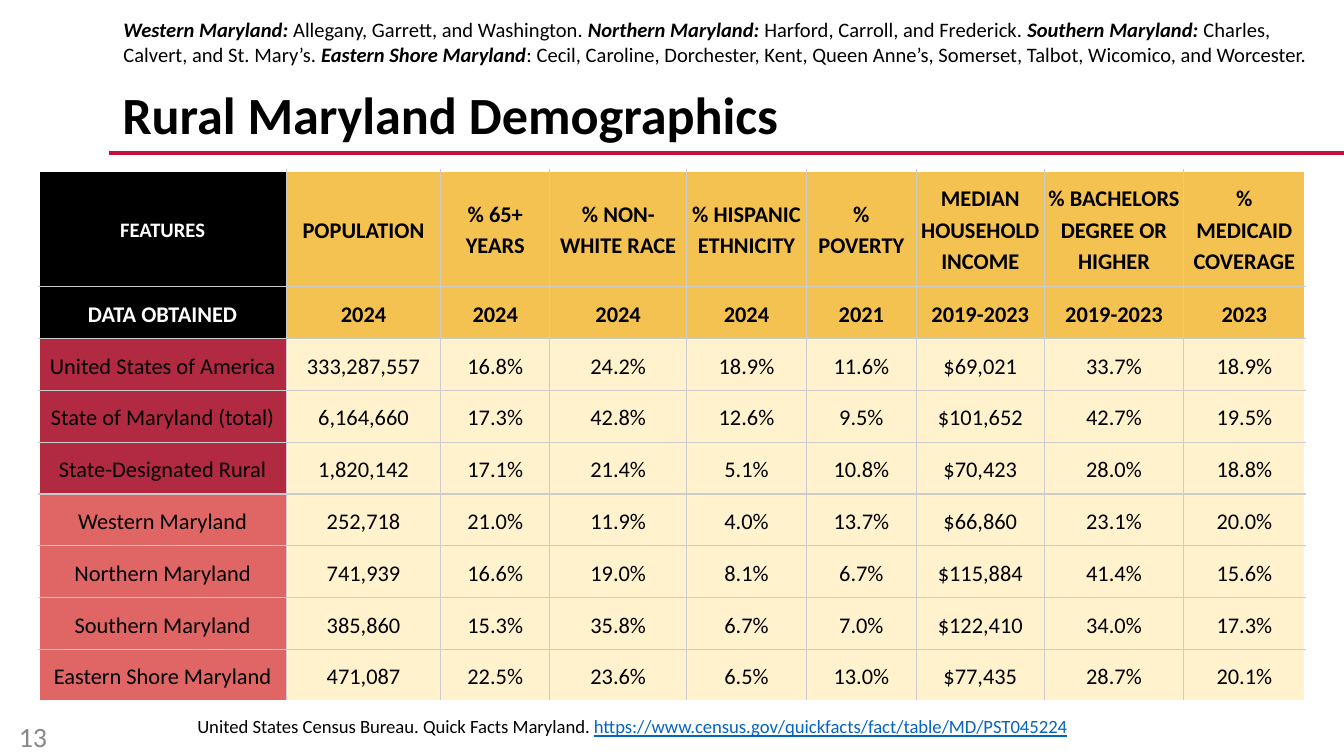
from pptx import Presentation, util as u
from pptx.dml.color import RGBColor
from pptx.enum import shapes, text
from pptx.oxml.ns import qn
from lxml import etree

# Content
TITLE = "Rural Maryland Demographics"
NOTE = [
    ("Western Maryland: ", "Allegany, Garrett, and Washington. "),
    ("Northern Maryland:", " Harford, Carroll, and Frederick. "),
    ("Southern Maryland:", " Charles, Calvert, and St. Mary’s. "),
    ("Eastern Shore Maryland", ": Cecil, Caroline, Dorchester, Kent, Queen Anne’s, "
     "Somerset, Talbot, Wicomico, and Worcester."),
]
SOURCE = "United States Census Bureau. Quick Facts Maryland. "
URL = "https://www.census.gov/quickfacts/fact/table/MD/PST045224"
PAGE = "13"
ROWS = [
    ("FEATURES", "POPULATION", "% 65+ YEARS", "% NON-WHITE RACE", "% HISPANIC ETHNICITY",
     "% POVERTY", "MEDIAN HOUSEHOLD INCOME", "% BACHELORS DEGREE OR HIGHER",
     "% MEDICAID COVERAGE"),
    ("DATA OBTAINED", "2024", "2024", "2024", "2024", "2021", "2019-2023", "2019-2023", "2023"),
    ("United States of America", "333,287,557", "16.8%", "24.2%", "18.9%", "11.6%",
     "$69,021", "33.7%", "18.9%"),
    ("State of Maryland (total)", "6,164,660", "17.3%", "42.8%", "12.6%", "9.5%",
     "$101,652", "42.7%", "19.5%"),
    ("State-Designated Rural", "1,820,142", "17.1%", "21.4%", "5.1%", "10.8%",
     "$70,423", "28.0%", "18.8%"),
    ("Western Maryland", "252,718", "21.0%", "11.9%", "4.0%", "13.7%",
     "$66,860", "23.1%", "20.0%"),
    ("Northern Maryland", "741,939", "16.6%", "19.0%", "8.1%", "6.7%",
     "$115,884", "41.4%", "15.6%"),
    ("Southern Maryland", "385,860", "15.3%", "35.8%", "6.7%", "7.0%",
     "$122,410", "34.0%", "17.3%"),
    ("Eastern Shore Maryland", "471,087", "22.5%", "23.6%", "6.5%", "13.0%",
     "$77,435", "28.7%", "20.1%"),
]
WIDTHS = [1.84, 1.15, 0.81, 1.02, 0.89, 0.82, 0.95, 1.04, 0.9]
HEADS = 2       # heading rows
STATES = 3      # nation and state rows, above the regions
HEIGHTS = [0.86, 0.39] + [2.7 / 7] * 7

# Style
FONT = "Calibri"
BLACK = RGBColor(0x00, 0x00, 0x00)
WHITE = RGBColor(0xFF, 0xFF, 0xFF)
RED = RGBColor(0xC4, 0x0E, 0x3E)
GOLD = RGBColor(0xF4, 0xC2, 0x51)
CREAM = RGBColor(0xFF, 0xF2, 0xCC)
WINE = RGBColor(0xB2, 0x2A, 0x42)
CORAL = RGBColor(0xE0, 0x66, 0x66)
GRID = RGBColor(0xCC, 0xCC, 0xCC)
GRAY = RGBColor(0x88, 0x88, 0x88)
LINK = RGBColor(0x05, 0x63, 0xC1)
MIDDLE = text.MSO_ANCHOR.MIDDLE


def write(para, words, size=12, color=BLACK, bold=False, italic=False, line=False):
    run = para.add_run()
    run.text = words
    font = run.font
    font.name, font.size, font.color.rgb = FONT, u.Pt(size), color
    font.bold, font.italic, font.underline = bold, italic, line


def set_frame(frame, side, end, anchor=text.MSO_ANCHOR.TOP):
    frame.word_wrap = True
    frame.auto_size = text.MSO_AUTO_SIZE.NONE
    frame.vertical_anchor = anchor
    frame.margin_left = frame.margin_right = u.Inches(side)
    frame.margin_top = frame.margin_bottom = u.Inches(end)
    return frame.paragraphs[0]


def add_box(slide, place, side=0.1, end=0.1, **form):
    box = slide.shapes.add_textbox(*map(u.Inches, place))
    return set_frame(box.text_frame, side, end, **form)


def add_edge(cell, side, outer):
    edge = etree.SubElement(cell._tc.get_or_add_tcPr(), qn("a:ln" + side),
                            w=str(u.Pt(1.5 if outer else 0.75)))
    fill = etree.SubElement(edge, qn("a:solidFill"))
    etree.SubElement(fill, qn("a:srgbClr"), val=str(WHITE if outer else GRID))


def pick_fill(row, col):
    if row < HEADS:
        return GOLD if col else BLACK
    if col:
        return CREAM
    return WINE if row < HEADS + STATES else CORAL


def add_grid(slide):
    place = 0.29, 1.27, sum(WIDTHS), sum(HEIGHTS)
    table = slide.shapes.add_table(len(ROWS), len(WIDTHS), *map(u.Inches, place)).table
    for col, width in zip(table.columns, WIDTHS):
        col.width = u.Inches(width)
    for row, height in zip(table.rows, HEIGHTS):
        row.height = u.Inches(height)
    for r, row in enumerate(ROWS):
        for c, words in enumerate(row):
            cell = table.cell(r, c)
            cell.margin_left = cell.margin_right = u.Pt(2)
            cell.margin_top = cell.margin_bottom = u.Pt(2)
            cell.vertical_anchor = MIDDLE
            add_edge(cell, "L", c == 0)
            add_edge(cell, "R", c == len(WIDTHS) - 1)
            add_edge(cell, "T", r == 0)
            add_edge(cell, "B", r == len(ROWS) - 1)
            cell.fill.solid()
            cell.fill.fore_color.rgb = pick_fill(r, c)
            para = cell.text_frame.paragraphs[0]
            para.alignment = text.PP_ALIGN.CENTER
            para.line_spacing = 1.15
            head = r < HEADS
            write(para, words, size=11 if r == c == 0 else 12, bold=head,
                  color=WHITE if head and c == 0 else BLACK)


def main():
    deck = Presentation()
    deck.slide_width = u.Inches(10)
    deck.slide_height = deck.slide_width * 9 // 16
    slide = deck.slides.add_slide(deck.slide_layouts[5])

    # Rule under the title
    rule = slide.shapes.add_connector(shapes.MSO_CONNECTOR.STRAIGHT, u.Inches(0.81),
                                      u.Inches(1.14), u.Inches(10), u.Inches(1.14))
    rule.line.color.rgb, rule.line.width = RED, u.Pt(2.25)
    etree.SubElement(rule._element.spPr, qn("a:effectLst"))

    # Title
    title = slide.shapes.title
    title.left, title.top, title.width, title.height = map(u.Inches, (0.82, 0.3, 8.62, 1.09))
    para = set_frame(title.text_frame, 0.09, 0.05, anchor=MIDDLE)
    para.alignment, para.space_after = text.PP_ALIGN.LEFT, u.Pt(8)
    write(para, TITLE, size=28, bold=True)

    # Table
    add_grid(slide)

    # Regions and their counties
    para = add_box(slide, (0.82, 0.03, 9.1, 0.52))
    for region, names in NOTE:
        write(para, region, size=11, bold=True, italic=True)
        write(para, names, size=11)

    # Page number
    para = add_box(slide, (0.05, 5.33, 0.6, 0.3), side=0.09, end=0.05, anchor=MIDDLE)
    write(para, PAGE, size=15, color=GRAY)

    # Source
    para = add_box(slide, (1.37, 5.22, 8.07, 0.37))
    write(para, SOURCE, size=10)
    write(para, URL, size=10, color=LINK, line=True)

    deck.save("out.pptx")


if __name__ == "__main__":
    main()
